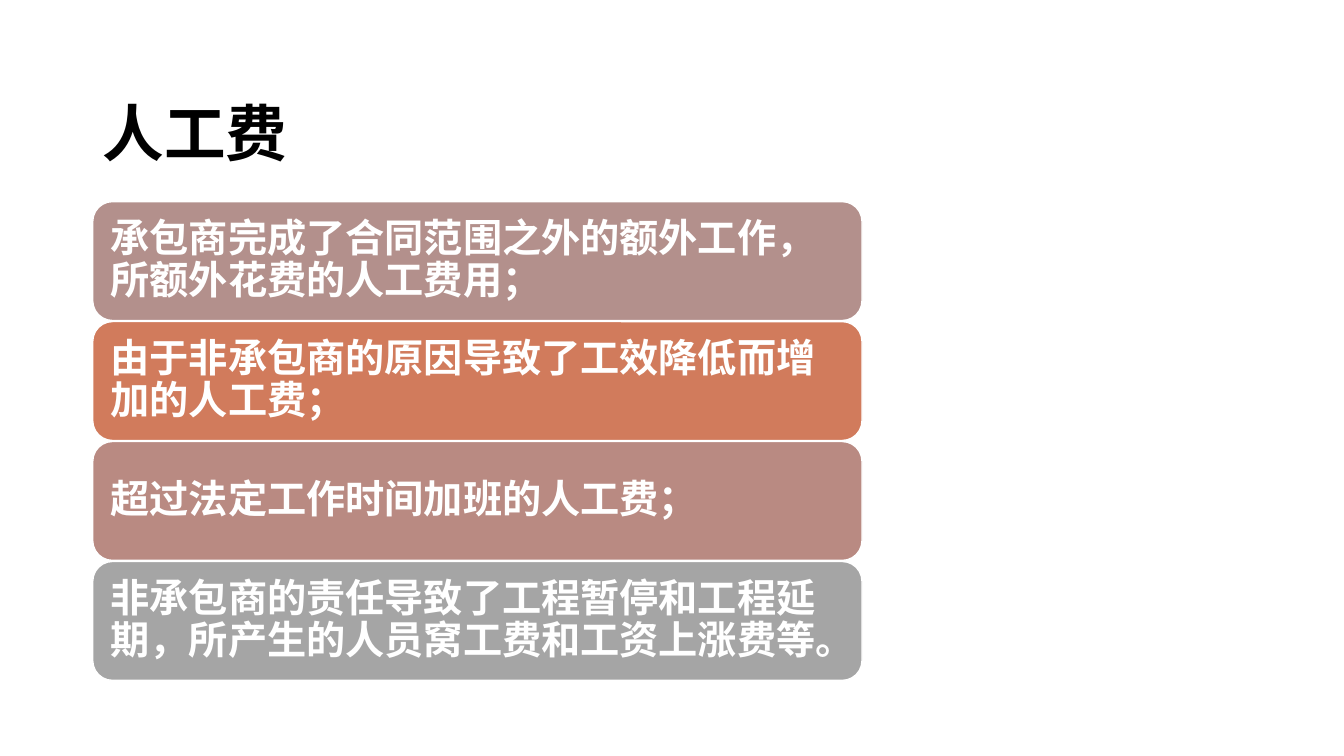
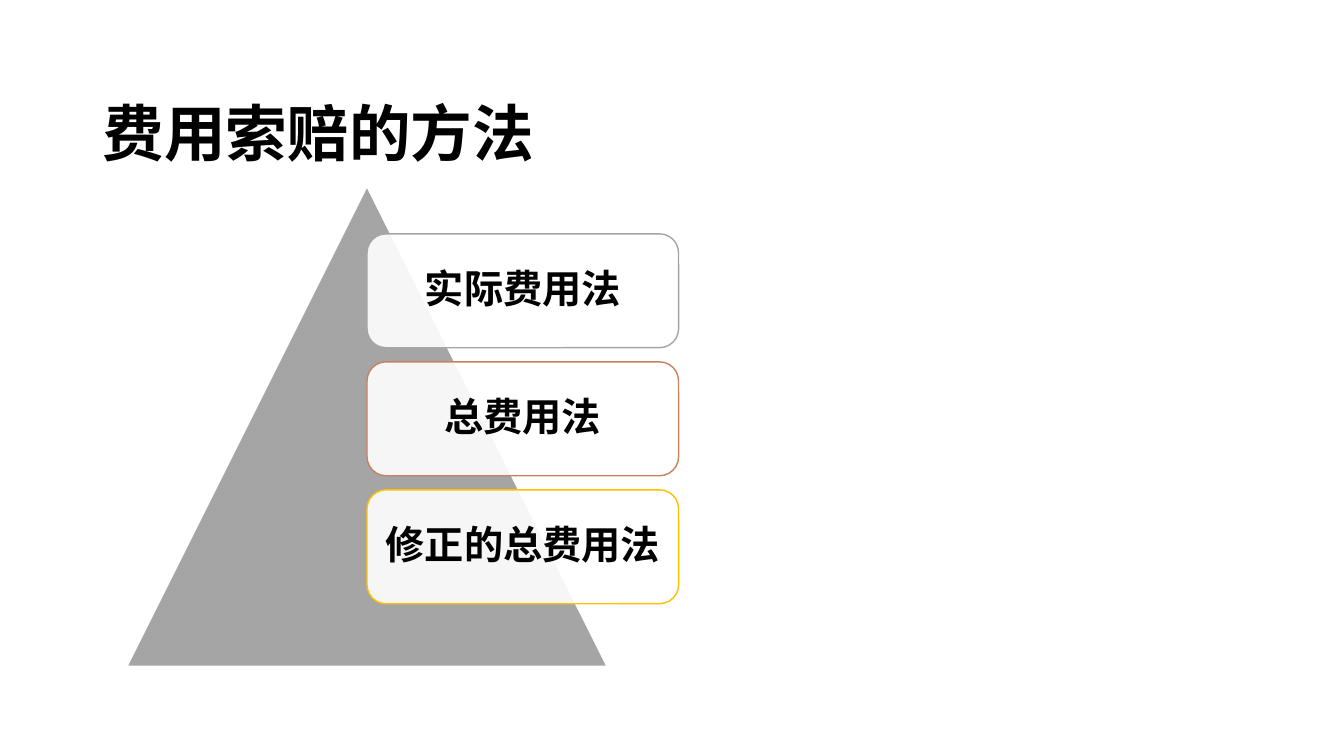
from lxml import etree
from pptx import Presentation, util as u
from pptx.dml.color import RGBColor
from pptx.enum import shapes, text
from pptx.oxml.ns import qn

PX = 9144  # EMU per px, 100 px to the inch
FONT = "Times New Roman"
COLORS = {
    "white": "FFFFFF",
    "black": "000000",
    "grey": "A5A5A5",
    "mauve": "B3908C",
    "orange": "D17B5C",
    "rose": "B98A82",
    "copper": "C9805C",
    "yellow": "FFC000",
}
ALIGN = text.PP_ALIGN
SHAPE = shapes.MSO_SHAPE

LABOUR_COSTS = [
    ("承包商完成了合同范围之外的额外工作，所额外花费的人工费用；", "mauve"),
    ("由于非承包商的原因导致了工效降低而增加的人工费；", "orange"),
    ("超过法定工作时间加班的人工费；", "rose"),
    ("非承包商的责任导致了工程暂停和工程延期，所产生的人员窝工费和工资上涨费等。", "grey"),
]
CLAIM_METHODS = [
    ("实际费用法", "grey"),
    ("总费用法", "copper"),
    ("修正的总费用法", "yellow"),
]


def rgb(name):
    return RGBColor.from_string(COLORS[name])


def px(*lengths):
    return [u.Emu(length * PX) for length in lengths]


def write(frame, wording, size, color, spacing, align=ALIGN.LEFT):
    frame.word_wrap = True
    frame.vertical_anchor = text.MSO_ANCHOR.MIDDLE
    paragraph = frame.paragraphs[0]
    paragraph.text = wording
    paragraph.alignment = align
    paragraph.line_spacing = spacing
    font = paragraph.font
    font.name, font.size, font.bold = FONT, u.Pt(size), True
    font.color.rgb = rgb(color)


def add_titled_slide(prs, title):
    slide = prs.slides.add_slide(prs.slide_layouts[6])
    box = slide.shapes.add_textbox(*px(92, 40, 1150, 145))
    write(box.text_frame, title, 44, "black", 1.5)
    return slide


def add_block(slide, kind, place, fill, line, opacity=100):
    """Add a flat shape with a 1 pt outline; opacity is in percent."""
    block = slide.shapes.add_shape(kind, *px(*place))
    block.shadow.inherit = False
    block.fill.solid()
    block.fill.fore_color.rgb = rgb(fill)
    if opacity < 100:
        fill_color = block.fill._xPr.find(qn("a:solidFill"))[0]
        etree.SubElement(fill_color, qn("a:alpha"), val=str(opacity * 1000))
    block.line.color.rgb = rgb(line)
    block.line.width = u.Pt(1)
    return block


def add_card(slide, place, wording, fill, line, color, align, opacity=100):
    card = add_block(slide, SHAPE.ROUNDED_RECTANGLE, place, fill, line, opacity)
    frame = card.text_frame
    (frame.margin_left, frame.margin_top,
     frame.margin_right, frame.margin_bottom) = px(12, 12, 12, 12)
    write(frame, wording, 28, color, 0.9, align)


def labour_cost_slide(prs):
    slide = add_titled_slide(prs, "人工费")
    for row, (cost, fill) in enumerate(LABOUR_COSTS):
        add_card(slide, (92, 200 + 119 * row, 763, 118), cost,
                 fill, "white", "white", ALIGN.LEFT)


def claim_method_slide(prs):
    slide = add_titled_slide(prs, "费用索赔的方法")
    add_block(slide, SHAPE.ISOSCELES_TRIANGLE, (126, 185, 476, 476), "grey", "white")
    for row, (method, line) in enumerate(CLAIM_METHODS):
        add_card(slide, (364, 232 + 127 * row, 309, 113), method,
                 "white", line, "black", ALIGN.CENTER, opacity=90)


def main():
    prs = Presentation()
    prs.slide_width, prs.slide_height = px(1333, 750)
    labour_cost_slide(prs)
    claim_method_slide(prs)
    prs.save("out.pptx")


if __name__ == "__main__":
    main()
